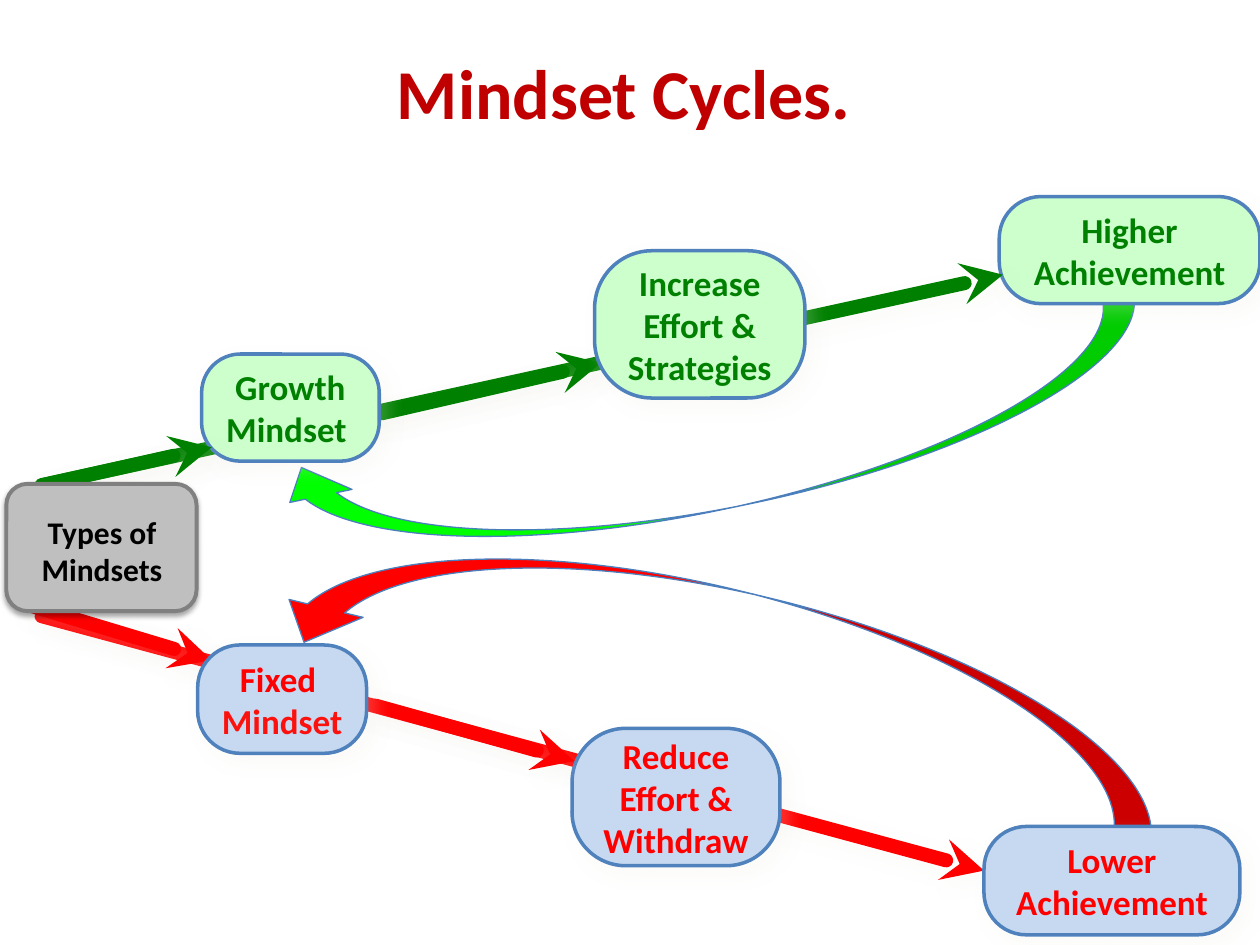
from lxml import etree
from pptx import Presentation
from pptx.dml.color import RGBColor
from pptx.enum import shapes, text
from pptx.oxml import parse_xml
from pptx.oxml.ns import nsdecls, qn
from pptx.util import Pt

RED, GREEN, BLUE = "FF0000", "008000", "4F81BD"
PALE_BLUE, PALE_GREEN, GREY = "C6D9F1", "CCFFCC", "BFBFBF"
SOFT_SHADOW = ("EEECE1", 21, 10, 6, 45)
color = RGBColor.from_string


def add_shadow(shape, tint, opacity, blur, distance, angle):
    """Append an outer shadow; call it after the line is set."""
    shape._element.spPr.append(parse_xml(
        f'<a:effectLst {nsdecls("a")}><a:outerShdw blurRad="{Pt(blur)}" dist="{Pt(distance)}" '
        f'dir="{angle * 60000}" algn="ctr" rotWithShape="0"><a:srgbClr val="{tint}">'
        f'<a:alpha val="{opacity * 1000}"/></a:srgbClr></a:outerShdw></a:effectLst>'))


def add_filled(parent, kind, bounds, fill, outline=None, width=0):
    shape = parent.add_shape(kind, *map(Pt, bounds))
    shape.fill.solid()
    shape.fill.fore_color.rgb = color(fill)
    if outline:
        shape.line.color.rgb = color(outline)
        shape.line.width = Pt(width)
    else:
        shape.line.fill.background()
    return shape


deck = Presentation()
deck.slide_width, deck.slide_height = Pt(720), Pt(540)
page = deck.slides.add_slide(deck.slide_layouts[5])

title = page.shapes.title
title.left, title.top, title.width, title.height = Pt(32.4), Pt(7.2), Pt(648), Pt(90)
title.text_frame.text = "Mindset Cycles."
title.text_frame.vertical_anchor = text.MSO_ANCHOR.MIDDLE
para = title.text_frame.paragraphs[0]
para.alignment = text.PP_ALIGN.CENTER
para.font.name, para.font.size, para.font.bold = "Calibri", Pt(40), True
para.font.color.rgb = color("C00000")

# Curved arrows that lead from achievement back to the mindset
for bounds, rotation, flipped, fill in (
    ((371.5, 121, 87.1, 519.1), 283.6, True, RED),
    ((372.2, 2.9, 72.7, 504), 78.2, False, "00FF00"),
):
    feedback = add_filled(page.shapes, shapes.MSO_SHAPE.CURVED_LEFT_ARROW, bounds, fill, "4B7EBC", 0.75)
    feedback.shadow.inherit = False
    feedback.rotation = rotation
    if flipped:
        feedback._element.spPr.find(qn("a:xfrm")).set("flipV", "1")

# Each layer: arrows (start, end, colour), then the stages that cover them
layers = (
    (
        (((23.8, 352.1), (562.3, 497.5), RED), ((15.8, 345.6), (121, 377.3), RED)),
        (("Reduce Effort & Withdraw", (326.9, 416.2, 118.8, 78.5), 0.391, RED, PALE_BLUE),
         ("Lower Achievement", (562.3, 472.3, 146.2, 61.9), 0.391, RED, PALE_BLUE),
         ("Higher Achievement", (571, 112.3, 149, 61.2), 0.391, GREEN, PALE_GREEN)),
    ),
    (
        (((23.8, 277.2), (573.1, 157), GREEN), ((218.2, 236.2), (343.4, 207.4), GREEN)),
        (("Growth Mindset ", (115.2, 202.3, 101.5, 61.2), 0.362, GREEN, PALE_GREEN),),
    ),
    (
        (((24.5, 277.2), (121, 255.6), GREEN), ((214.6, 403.2), (328.3, 434.9), RED)),
        (("Increase Effort & Strategies", (339.8, 143.3, 120.2, 84.2), 0.391, GREEN, PALE_GREEN),
         ("Fixed \nMindset", (113, 368.6, 96.5, 61.9), 0.391, RED, PALE_BLUE)),
    ),
)
for arrows, stages in layers:
    for start, end, ink in arrows:
        arrow = page.shapes.add_connector(shapes.MSO_CONNECTOR.STRAIGHT, *map(Pt, start + end))
        arrow.line.color.rgb = color(ink)
        arrow.line.width = Pt(8)
        outline = arrow._element.spPr.find(qn("a:ln"))
        outline.set("cap", "rnd")
        etree.SubElement(outline, qn("a:tailEnd"), type="stealth")
        add_shadow(arrow, *SOFT_SHADOW)

    for label, bounds, rounding, ink, fill in stages:
        stage = add_filled(page.shapes, shapes.MSO_SHAPE.ROUNDED_RECTANGLE, bounds, fill, BLUE, 2)
        stage.adjustments[0] = rounding
        add_shadow(stage, *SOFT_SHADOW)
        frame = stage.text_frame
        frame.text = label
        frame.word_wrap = True
        frame.vertical_anchor = text.MSO_ANCHOR.MIDDLE
        frame.margin_left = frame.margin_right = frame.margin_top = frame.margin_bottom = Pt(2.9)
        for para in frame.paragraphs:
            para.alignment = text.PP_ALIGN.CENTER
            para.font.name, para.font.size, para.font.bold = "Calibri", Pt(20), True
            para.font.color.rgb = color("FB120E" if para.text == "Mindset" else ink)

# Starting point of both cycles
origin = page.shapes.add_group_shape()
card = add_filled(origin.shapes, shapes.MSO_SHAPE.ROUNDED_RECTANGLE,
                  (3.6, 276.5, 108.7, 72.7), GREY, "808080", 2.25)
add_shadow(card, "000000", 35, 3.1, 1.8, 90)
caption = add_filled(origin.shapes, shapes.MSO_SHAPE.RECTANGLE, (8.6, 289.4, 99.4, 51.1), GREY)
caption.shadow.inherit = False
frame = caption.text_frame
frame.text = "Types of Mindsets"
frame.word_wrap = True
frame.auto_size = text.MSO_AUTO_SIZE.SHAPE_TO_FIT_TEXT
frame.vertical_anchor = text.MSO_ANCHOR.TOP
para = frame.paragraphs[0]
para.alignment = text.PP_ALIGN.CENTER
para.font.name, para.font.size, para.font.bold = "Calibri", Pt(18), True
para.font.color.rgb = color("000000")

deck.save("out.pptx")
